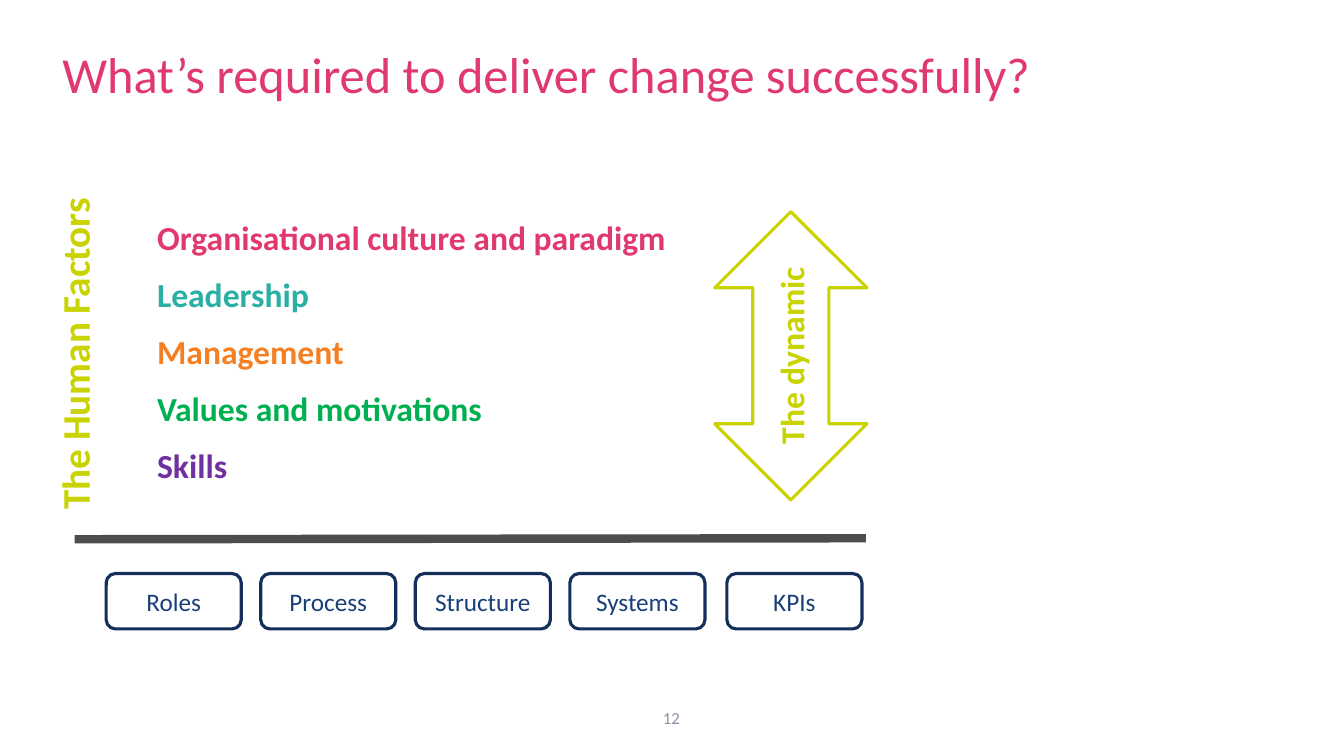
from lxml.etree import SubElement
from pptx import Presentation
from pptx.dml.color import RGBColor
from pptx.enum.shapes import MSO_CONNECTOR, MSO_SHAPE
from pptx.enum.text import MSO_ANCHOR, PP_ALIGN
from pptx.oxml.ns import qn
from pptx.util import Inches, Pt

PINK = RGBColor(0xE0, 0x39, 0x6E)
LIME = RGBColor(0xC9, 0xD3, 0x00)
TEAL = RGBColor(0x29, 0xAF, 0xA4)
ORANGE = RGBColor(0xF5, 0x80, 0x23)
GREEN = RGBColor(0x00, 0xB0, 0x50)
PURPLE = RGBColor(0x70, 0x30, 0xA0)
NAVY = RGBColor(0x13, 0x2F, 0x5A)
BLUE = RGBColor(0x19, 0x3F, 0x78)
CHARCOAL = RGBColor(0x4D, 0x4D, 0x4D)
GREY = RGBColor(0x8C, 0x93, 0xA8)


class SlideBuilder:
    """Draws on one slide; places are percentages of its width and height."""

    font_name = "Calibri"
    outline = Pt(2.25)

    def __init__(self, deck):
        self.width, self.height = deck.slide_width, deck.slide_height
        self.page = deck.slides.add_slide(deck.slide_layouts[6])

    def place(self, left, top, width, height):
        return (round(left * self.width / 100), round(top * self.height / 100),
                round(width * self.width / 100), round(height * self.height / 100))

    def add_words(self, para, words, size, color, bold=False, align=PP_ALIGN.LEFT):
        para.alignment = align
        span = para.add_run()
        span.text = words
        span.font.name = self.font_name
        span.font.size = Pt(size)
        span.font.bold = bold
        span.font.color.rgb = color

    def text(self, area, lines, size, bold=False, align=PP_ALIGN.LEFT,
             anchor=MSO_ANCHOR.TOP, inset_top=0.05, space_after=0,
             line_spacing=1.0, rotation=0):
        box = self.page.shapes.add_textbox(*self.place(*area))
        box.rotation = rotation
        frame = box.text_frame
        frame.word_wrap = True
        frame.vertical_anchor = anchor
        frame.margin_top = Inches(inset_top)
        for index, (words, color) in enumerate(lines):
            para = frame.add_paragraph() if index else frame.paragraphs[0]
            para.space_after = Pt(space_after)
            para.line_spacing = line_spacing
            self.add_words(para, words, size, color, bold, align)

    def shape(self, kind, area, words, size, line_color, text_color,
              bold=False, upward=False):
        box = self.page.shapes.add_shape(kind, *self.place(*area))
        box.shadow.inherit = False
        box.fill.background()
        box.line.color.rgb = line_color
        box.line.width = self.outline
        frame = box.text_frame
        frame.word_wrap = True
        frame.vertical_anchor = MSO_ANCHOR.MIDDLE
        frame.margin_left = frame.margin_right = Inches(0.1)
        frame.margin_top = frame.margin_bottom = Inches(0.08)
        if upward:
            box.element.txBody.bodyPr.set("vert", "vert270")
        self.add_words(frame.paragraphs[0], words, size, text_color, bold,
                       PP_ALIGN.CENTER)

    def line(self, ends, color, weight):
        rule = self.page.shapes.add_connector(
            MSO_CONNECTOR.STRAIGHT, *self.place(*ends))
        rule.line.color.rgb = color
        rule.line.width = Pt(weight)
        SubElement(rule.element.spPr, qn("a:effectLst"))


def main():
    deck = Presentation()
    deck.slide_width, deck.slide_height = Inches(13.33), Inches(7.5)
    slide = SlideBuilder(deck)

    # Page number and title
    slide.text((38.7, 92.27, 22.5, 5.33), [("12", GREY)], 12,
               align=PP_ALIGN.CENTER, anchor=MSO_ANCHOR.MIDDLE)
    slide.text((3.9, 0, 92.1, 18.4),
               [("What’s required to deliver change successfully?", PINK)], 36,
               inset_top=0.47, line_spacing=0.95)

    # Human factors
    slide.text((-7.2, 42.27, 25.5, 7.6), [("The Human Factors", LIME)], 28,
               bold=True, rotation=270)
    factors = [("Organisational culture and paradigm", PINK),
               ("Leadership", TEAL),
               ("Management", ORANGE),
               ("Values and motivations", GREEN),
               ("Skills", PURPLE)]
    slide.text((10.95, 28, 55.35, 37.2), factors, 24, bold=True, space_after=12)

    # Divider
    slide.line((5.55, 71.33, 64.43, 71.2), CHARCOAL, 6)

    # Structural elements; the last stands slightly further right
    elements = ["Roles", "Process", "Structure", "Systems", "KPIs"]
    lefts = [7.9 + 11.5 * column for column in range(4)] + [54.08]
    for left, name in zip(lefts, elements):
        slide.shape(MSO_SHAPE.ROUNDED_RECTANGLE, (left, 75.87, 10.05, 7.33),
                    name, 18, NAVY, BLUE)

    # Dynamic arrow
    slide.shape(MSO_SHAPE.UP_DOWN_ARROW, (53.18, 28, 11.33, 38.13),
                "The dynamic", 24, LIME, LIME, bold=True, upward=True)

    deck.save("out.pptx")


if __name__ == "__main__":
    main()
